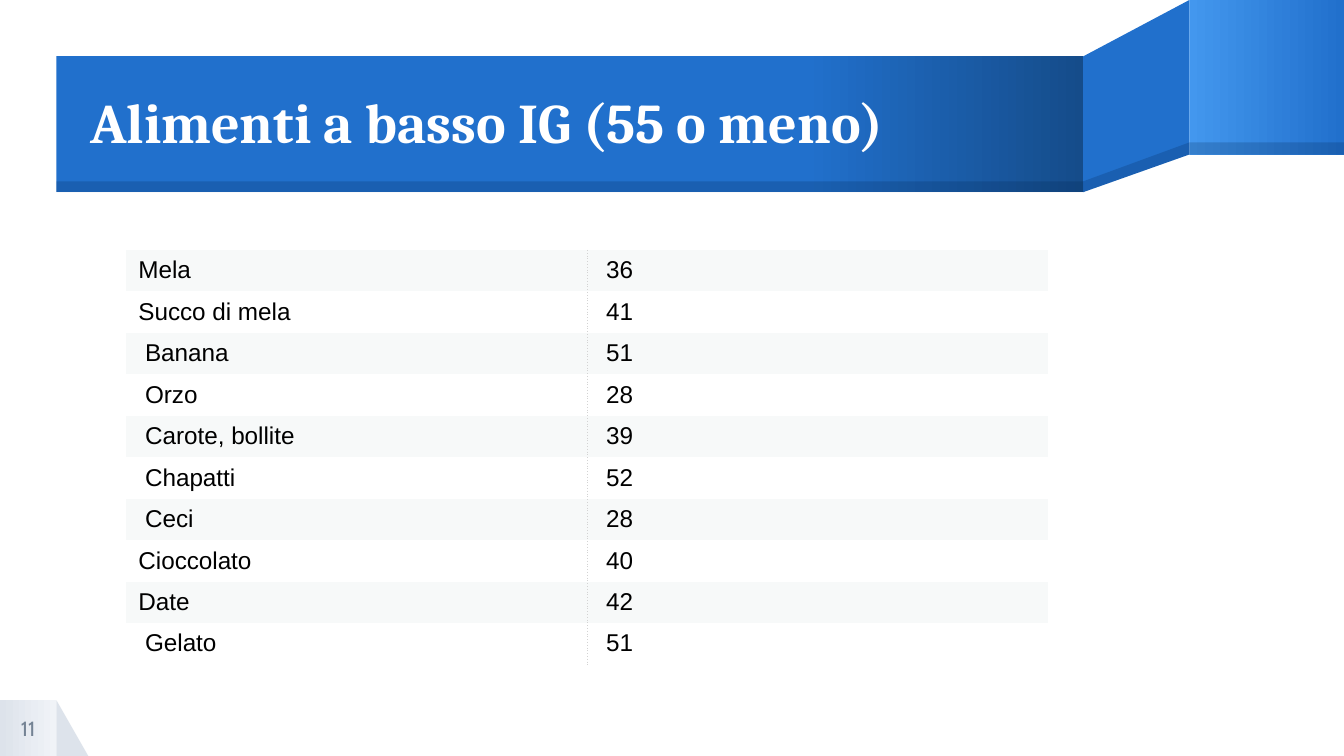
from dataclasses import dataclass

from lxml import etree
from pptx import Presentation
from pptx.dml.color import RGBColor
from pptx.enum.shapes import MSO_SHAPE
from pptx.enum.text import MSO_ANCHOR, PP_ALIGN
from pptx.oxml.ns import qn
from pptx.util import Inches, Pt

RECT = MSO_SHAPE.RECTANGLE
TRIANGLE = MSO_SHAPE.RIGHT_TRIANGLE
MIDDLE = MSO_ANCHOR.MIDDLE
LEFT, CENTER = PP_ALIGN.LEFT, PP_ALIGN.CENTER
PLAIN_TABLE = "{2D5ABB26-0587-4C30-8999-92F81FD0307C}"


@dataclass(frozen=True)
class Theme:
    """Colours, fonts and type sizes of the slide."""
    blue: str = "2170CC"
    light_blue: str = "4397EE"
    dark_blue: str = "154C8A"
    shade: str = "001F46"
    grey: str = "DDE3EB"
    pale_grey: str = "F0F3F7"
    number: str = "748394"
    white: str = "FFFFFF"
    black: str = "000000"
    band: str = "F7F9F9"
    rule: str = "D3D3D3"
    title_font: str = "Cambria"
    number_font: str = "Cabin"
    body_font: str = "Arial"
    title_size: int = 30
    body_size: int = 13
    number_size: int = 11


T = Theme()

FOODS = [
    ("Mela", "36", False),
    ("Succo di mela", "41", False),
    ("Banana", "51", True),
    ("Orzo", "28", True),
    ("Carote, bollite", "39", True),
    ("Chapatti", "52", True),
    ("Ceci", "28", True),
    ("Cioccolato", "40", False),
    ("Date", "42", False),
    ("Gelato", "51", True),
]


def paint(sp, color, alpha=None):
    """Give a shape a flat fill, with optional opacity in percent."""
    sp.shadow.inherit = False
    sp.line.fill.background()
    sp.fill.solid()
    sp.fill.fore_color.rgb = RGBColor.from_string(color)
    if alpha is not None:
        clr = sp._element.spPr.find(".//" + qn("a:srgbClr"))
        etree.SubElement(clr, qn("a:alpha"), val=str(alpha * 1000))


def paint_gradient(sp, *stops):
    """Give a shape a left-to-right gradient from (percent, colour) stops."""
    sp.shadow.inherit = False
    sp.line.fill.background()
    sp.fill.gradient()
    sp.fill.gradient_angle = 0
    stop_list = sp._element.spPr.find(".//" + qn("a:gsLst"))
    stop_list.clear()
    for pos, color in stops:
        gs = etree.SubElement(stop_list, qn("a:gs"), pos=str(pos * 1000))
        etree.SubElement(gs, qn("a:srgbClr"), val=color)


def add_block(slide, kind, x, y, w, h):
    """Add a preset shape measured in inches."""
    return slide.shapes.add_shape(kind, Inches(x), Inches(y), Inches(w), Inches(h))


def add_outline(slide, points):
    """Add a closed polygon through points in inches."""
    start, *rest = [(Inches(x), Inches(y)) for x, y in points]
    builder = slide.shapes.build_freeform(*start)
    builder.add_line_segments(rest, close=True)
    return builder.convert_to_shape()


def style(p, font, size, color, bold=False):
    """Set the font of a paragraph."""
    p.font.name, p.font.size, p.font.bold = font, Pt(size), bold
    p.font.color.rgb = RGBColor.from_string(color)


def add_label(slide, text, x, y, w, h, align=LEFT):
    """Add a middle-anchored text box without margins and return its paragraph."""
    tf = slide.shapes.add_textbox(Inches(x), Inches(y), Inches(w), Inches(h)).text_frame
    tf.word_wrap, tf.vertical_anchor = True, MIDDLE
    tf.margin_left = tf.margin_top = tf.margin_right = tf.margin_bottom = 0
    p = tf.paragraphs[0]
    p.text, p.alignment = text, align
    return p


def add_title_ribbon(slide, title, x, y, w, h):
    """Draw the folded ribbon with its shaded lower edge and the title."""
    flap_w, flap_h, drop, edge = 1.15, 1.15, 0.42, 0.08
    flap_x, fold_x = x + w - flap_w, x + w - 1.94
    banner_w, bottom = fold_x - x, y + h
    flap_end, flap_edge = y + flap_h, y + flap_h - 0.09

    fold = [(flap_x, y), (fold_x, y + drop), (fold_x, bottom), (flap_x, flap_end)]
    paint(add_outline(slide, fold), T.blue)
    paint_gradient(add_block(slide, RECT, flap_x, y, flap_w, flap_h),
                   (0, T.light_blue), (100, T.blue))
    paint_gradient(add_block(slide, RECT, x, y + drop, banner_w, h - drop),
                   (0, T.blue), (73, T.blue), (100, T.dark_blue))

    fold_edge = [(flap_x, flap_edge), (fold_x, bottom - edge),
                 (fold_x, bottom), (flap_x, flap_end)]
    for sp in (add_outline(slide, fold_edge),
               add_block(slide, RECT, flap_x, flap_edge, flap_w, flap_end - flap_edge),
               add_block(slide, RECT, x, bottom - edge, banner_w, edge)):
        paint(sp, T.shade, 20)

    p = add_label(slide, title, x + 0.25, y + drop + 0.01, banner_w - 0.25, h - drop)
    p.line_spacing = 0.9
    style(p, T.title_font, T.title_size, T.white, bold=True)


def add_page_number(slide, number, x, y, size):
    """Draw the corner tab with the page number."""
    paint(add_block(slide, TRIANGLE, x + size, y, 0.24, size), T.grey)
    paint_gradient(add_block(slide, RECT, x, y, size, size),
                   (0, T.grey), (100, T.pale_grey))
    p = add_label(slide, number, x, y, size, size, CENTER)
    style(p, T.number_font, T.number_size, T.number)


def add_dotted_border(cell, side):
    """Put a dotted rule on one side of a cell."""
    ln = etree.Element(qn("a:" + side), w=str(Pt(0.5)))
    fill = etree.SubElement(ln, qn("a:solidFill"))
    etree.SubElement(fill, qn("a:srgbClr"), val=T.rule)
    etree.SubElement(ln, qn("a:prstDash"), val="dot")
    cell._tc.get_or_add_tcPr().insert(0, ln)


def add_food_table(slide, foods, x, y, w, h):
    """Add the banded table of foods and their glycaemic index."""
    frame = slide.shapes.add_table(len(foods), 2, Inches(x), Inches(y),
                                   Inches(w), Inches(h))
    table = frame.table
    table.first_row = table.horz_banding = False
    table._tbl.tblPr.find(qn("a:tableStyleId")).text = PLAIN_TABLE
    for i, (food, index, indented) in enumerate(foods):
        columns = ((food, indented, "lnR"), (index, True, "lnL"))
        for j, (text, inset, side) in enumerate(columns):
            cell = table.cell(i, j)
            cell.margin_left = Inches(0.14 if inset else 0.09)
            cell.margin_right = Inches(0.09)
            cell.margin_top, cell.margin_bottom = Inches(0.05), Inches(0.04)
            cell.fill.solid()
            cell.fill.fore_color.rgb = RGBColor.from_string(T.white if i % 2 else T.band)
            add_dotted_border(cell, side)
            p = cell.text_frame.paragraphs[0]
            p.text = text
            style(p, T.body_font, T.body_size, T.black)


def main():
    """Build and save the slide."""
    prs = Presentation()
    prs.slide_width, prs.slide_height = Inches(10), Inches(10 * 9 / 16)
    slide = prs.slides.add_slide(prs.slide_layouts[6])
    add_title_ribbon(slide, "Alimenti a basso IG (55 o meno)", 0.42, 0, 9.58, 1.43)
    add_page_number(slide, "11", 0, 5.21, 0.42)
    add_food_table(slide, FOODS, 0.94, 1.86, 6.86, 3.09)
    prs.save("out.pptx")


if __name__ == "__main__":
    main()
